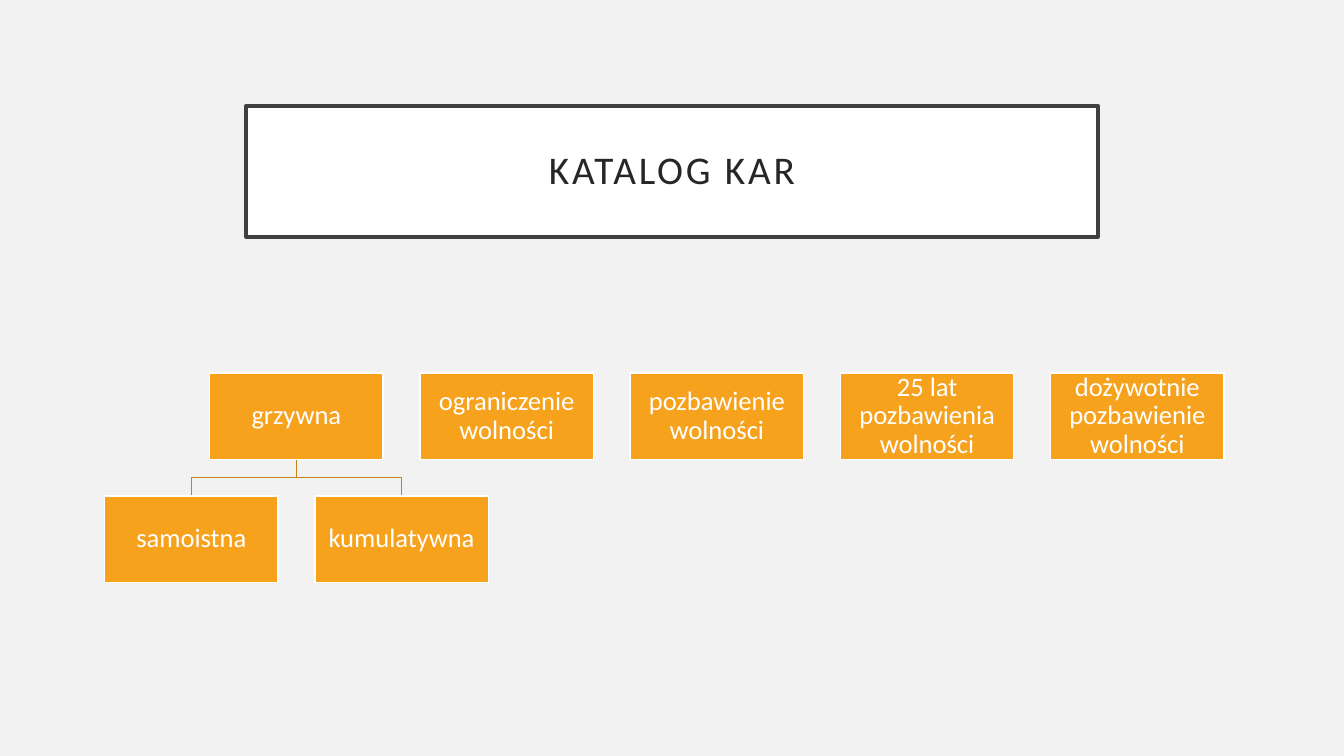
from dataclasses import dataclass

from pptx import Presentation
from pptx.dml.color import RGBColor
from pptx.enum.shapes import MSO_SHAPE
from pptx.enum.text import MSO_ANCHOR, MSO_AUTO_SIZE, PP_ALIGN
from pptx.util import Inches, Pt

RECTANGLE = MSO_SHAPE.RECTANGLE
MIDDLE = MSO_ANCHOR.MIDDLE
CENTER = PP_ALIGN.CENTER
NO_AUTOFIT = MSO_AUTO_SIZE.NONE

FONT = "Calibri"
ORANGE = "F6A21D"
BROWN = "C58217"
WHITE = "FFFFFF"

BOX_WIDTH, BOX_HEIGHT = 1.72, 0.86
FIRST_LEFT, LAST_LEFT = 2.08, 10.42
PENALTY_TOP, FINE_TOP = 3.7, 4.92
PENALTIES = [
    "grzywna",
    "ograniczenie wolności",
    "pozbawienie wolności",
    "25 lat pozbawienia wolności",
    "dożywotnie pozbawienie wolności",
]
FINES = ["samoistna", "kumulatywna"]
PITCH = (LAST_LEFT - FIRST_LEFT) / (len(PENALTIES) - 1)


@dataclass(frozen=True)
class Box:
    text: str
    left: float
    top: float

    @property
    def center(self) -> float:
        return self.left + BOX_WIDTH / 2

    @property
    def bottom(self) -> float:
        return self.top + BOX_HEIGHT


def color(value: str) -> RGBColor:
    return RGBColor.from_string(value)


def paint(shape, fill: str, line: str, width: float) -> None:
    shape.fill.solid()
    shape.fill.fore_color.rgb = color(fill)
    shape.line.color.rgb = color(line)
    shape.line.width = Pt(width)


def write(shape, text: str, size: float, ink: str, inset: float, space_after: float):
    frame = shape.text_frame
    frame.text = text
    margin = Inches(inset)
    frame_format = {
        "word_wrap": True,
        "auto_size": NO_AUTOFIT,
        "vertical_anchor": MIDDLE,
        "margin_left": margin,
        "margin_right": margin,
        "margin_top": margin,
        "margin_bottom": margin,
    }
    for name, value in frame_format.items():
        setattr(frame, name, value)
    paragraph = frame.paragraphs[0]
    paragraph_format = {
        "alignment": CENTER,
        "line_spacing": 0.9,
        "space_before": Pt(0),
        "space_after": Pt(space_after),
    }
    for name, value in paragraph_format.items():
        setattr(paragraph, name, value)
    run = paragraph.runs[0]
    for name, value in {"name": FONT, "size": Pt(size), "bold": False}.items():
        setattr(run.font, name, value)
    run.font.color.rgb = color(ink)
    return run


def draw_title(slide, text: str) -> None:
    title = slide.shapes.title
    place = {"left": 2.44, "top": 1.05, "width": 8.45, "height": 1.3}
    for name, value in place.items():
        setattr(title, name, Inches(value))
    paint(title, WHITE, "404040", 2.5)
    run = write(title, text, 28, "262626", 0.2, 0)
    run.font._element.set("spc", "200")


def draw_box(slide, box: Box) -> None:
    lengths = map(Inches, (box.left, box.top, BOX_WIDTH, BOX_HEIGHT))
    shape = slide.shapes.add_shape(RECTANGLE, *lengths)
    shape.shadow.inherit = False
    paint(shape, ORANGE, WHITE, 1)
    write(shape, box.text, 19, WHITE, 0.01, 0)


def draw_branch(slide, parent: Box, child: Box) -> None:
    bend = (parent.bottom + child.top) / 2
    corners = [
        (parent.center, bend),
        (child.center, bend),
        (child.center, child.top),
    ]
    builder = slide.shapes.build_freeform(Inches(parent.center), Inches(parent.bottom))
    builder.add_line_segments([(Inches(x), Inches(y)) for x, y in corners], close=False)
    branch = builder.convert_to_shape()
    branch.shadow.inherit = False
    branch.fill.background()
    branch.line.color.rgb = color(BROWN)
    branch.line.width = Pt(1)


def main() -> None:
    presentation = Presentation()
    presentation.slide_width = Inches(13.33)
    presentation.slide_height = Inches(7.5)
    slide = presentation.slides.add_slide(presentation.slide_layouts[5])
    slide.background.fill.solid()
    slide.background.fill.fore_color.rgb = color("F2F2F2")

    penalties = [
        Box(text, FIRST_LEFT + i * PITCH, PENALTY_TOP)
        for i, text in enumerate(PENALTIES)
    ]
    fines = [
        Box(text, FIRST_LEFT + (i - 0.5) * PITCH, FINE_TOP)
        for i, text in enumerate(FINES)
    ]

    draw_title(slide, "KATALOG KAR")
    for fine in fines:
        draw_branch(slide, penalties[0], fine)
    for box in penalties + fines:
        draw_box(slide, box)
    presentation.save("out.pptx")


if __name__ == "__main__":
    main()
